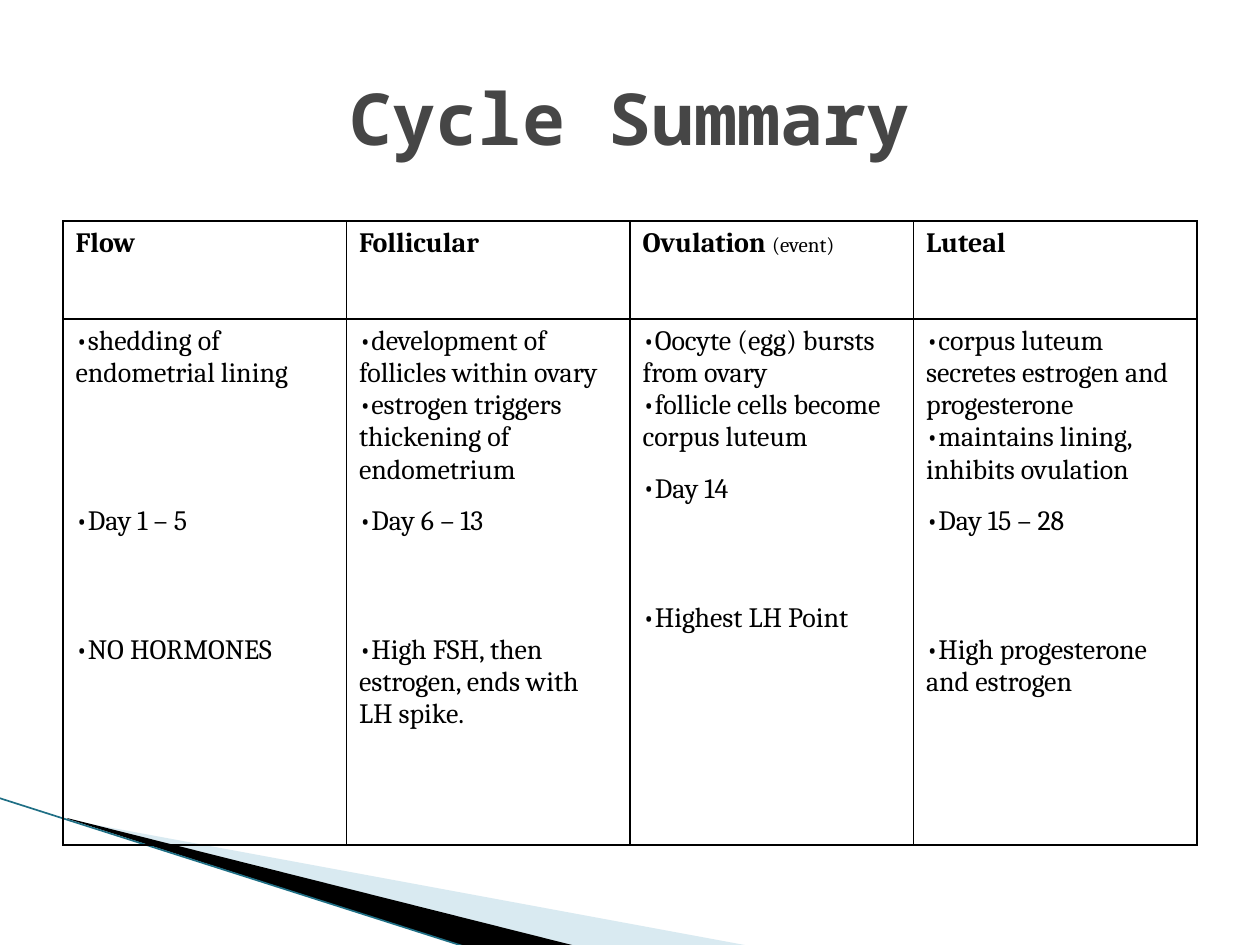
from lxml import etree
from pptx import Presentation
from pptx.dml.color import RGBColor
from pptx.enum import shapes, text
from pptx.oxml import ns
from pptx.util import Emu, Pt

SCALE = 914400 / 126  # EMU in one px

TITLE = "Cycle Summary"
TITLE_FONT, BODY_FONT = "Noto Sans Mono", "Cambria"
BLACK = "000000"

# Each phase: header, small header note, tab stop, bullets as (space before, words)
PHASES = [
    ("Flow", "", 32, [
        (0, "shedding of endometrial lining"),
        (116, "Day 1 – 5"),
        (97, "NO HORMONES")]),
    ("Follicular", "", 34, [
        (0, "development of follicles within ovary"),
        (0, "estrogen triggers thickening of endometrium"),
        (19, "Day 6 – 13"),
        (97, "High FSH, then estrogen, ends with LH spike.")]),
    ("Ovulation ", "(event)", 30, [
        (0, "Oocyte (egg) bursts from ovary"),
        (0, "follicle cells become corpus luteum"),
        (19, "Day 14"),
        (97, "Highest LH Point")]),
    ("Luteal", "", 33, [
        (0, "corpus luteum secretes estrogen and progesterone"),
        (0, "maintains lining, inhibits ovulation"),
        (19, "Day 15 – 28"),
        (97, "High progesterone and estrogen")]),
]
TABLE_BOX = (63, 221, 1134, 624)
ROW_HEIGHTS = (98, 526)

# Corner wedges: points, colour, opacity in percent
WEDGES = [
    ([(69, 820), (750, 946), (575, 946), (69, 819)], "A0CBDC", 40),
    ([(67, 818), (576, 946), (469, 948), (68, 819)], BLACK, 100),
]
EDGE_LINE = (-1, 798, 469, 948)


def px(value):
    return Emu(round(value * SCALE))


def color(value):
    return RGBColor.from_string(value)


def add_element(parent, tag, **attributes):
    return etree.SubElement(parent, ns.qn(tag), attributes)


def add_run(paragraph, words, font, size, bold=False, hex_color=BLACK):
    run = paragraph.add_run()
    run.text = words
    run.font.name, run.font.size, run.font.bold = font, Pt(size), bold
    run.font.color.rgb = color(hex_color)


def add_wedge(slide, points, hex_color, opacity):
    builder = slide.shapes.build_freeform(*points[0], scale=SCALE)
    builder.add_line_segments(points[1:], close=True)
    shape = builder.convert_to_shape()
    shape.shadow.inherit = False
    shape.line.fill.background()
    shape.fill.solid()
    shape.fill.fore_color.rgb = color(hex_color)
    if opacity < 100:
        fill_color = shape.fill._xPr.find(".//" + ns.qn("a:srgbClr"))
        add_element(fill_color, "a:alpha", val=str(opacity * 1000))


def format_cell(cell):
    properties = cell._tc.get_or_add_tcPr()
    for side in ("a:lnL", "a:lnR", "a:lnT", "a:lnB"):
        border = add_element(properties, side, w=str(Pt(1)))
        add_element(add_element(border, "a:solidFill"), "a:srgbClr", val=BLACK)
    cell.fill.background()


def add_bullets(cell, bullets, tab):
    frame = cell.text_frame
    for index, (gap, words) in enumerate(bullets):
        paragraph = frame.add_paragraph() if index else frame.paragraphs[0]
        properties = paragraph._p.get_or_add_pPr()
        properties.set("marL", "0")
        properties.set("indent", "0")
        add_element(properties, "a:buFont", typeface=BODY_FONT)
        add_element(properties, "a:buChar", char="•")
        tabs = add_element(properties, "a:tabLst")
        add_element(tabs, "a:tab", pos=str(px(tab)), algn="l")
        if gap:
            paragraph.space_before = px(gap)
        add_run(paragraph, words, BODY_FONT, 16)


presentation = Presentation()
presentation.slide_width, presentation.slide_height = px(1260), px(945)
slide = presentation.slides.add_slide(presentation.slide_layouts[5])

# Corner decoration
for wedge in WEDGES:
    add_wedge(slide, *wedge)
edge = slide.shapes.add_connector(
    shapes.MSO_CONNECTOR.STRAIGHT, *[px(value) for value in EDGE_LINE])
edge.line.color.rgb = color("1F6F85")
edge.line.width = Pt(0.95)
add_element(edge._element.spPr, "a:effectLst")

# Title
title = slide.shapes.title
title.left, title.top, title.width, title.height = map(px, (63, 38, 1134, 157))
title.text_frame.vertical_anchor = text.MSO_ANCHOR.MIDDLE
heading = title.text_frame.paragraphs[0]
heading.alignment = text.PP_ALIGN.CENTER
add_run(heading, TITLE, TITLE_FONT, 41, True, "464646")

# Phase table
table = slide.shapes.add_table(
    len(ROW_HEIGHTS), len(PHASES), *map(px, TABLE_BOX)).table
table.first_row = table.horz_banding = False
for row, height in zip(table.rows, ROW_HEIGHTS):
    row.height = px(height)
for index, (name, note, tab, bullets) in enumerate(PHASES):
    table.columns[index].width = px(TABLE_BOX[2] / len(PHASES))
    header, body = table.cell(0, index), table.cell(1, index)
    format_cell(header)
    format_cell(body)
    header_paragraph = header.text_frame.paragraphs[0]
    add_run(header_paragraph, name, BODY_FONT, 16, True)
    if note:
        add_run(header_paragraph, note, BODY_FONT, 12)
    add_bullets(body, bullets, tab)

presentation.save("out.pptx")
